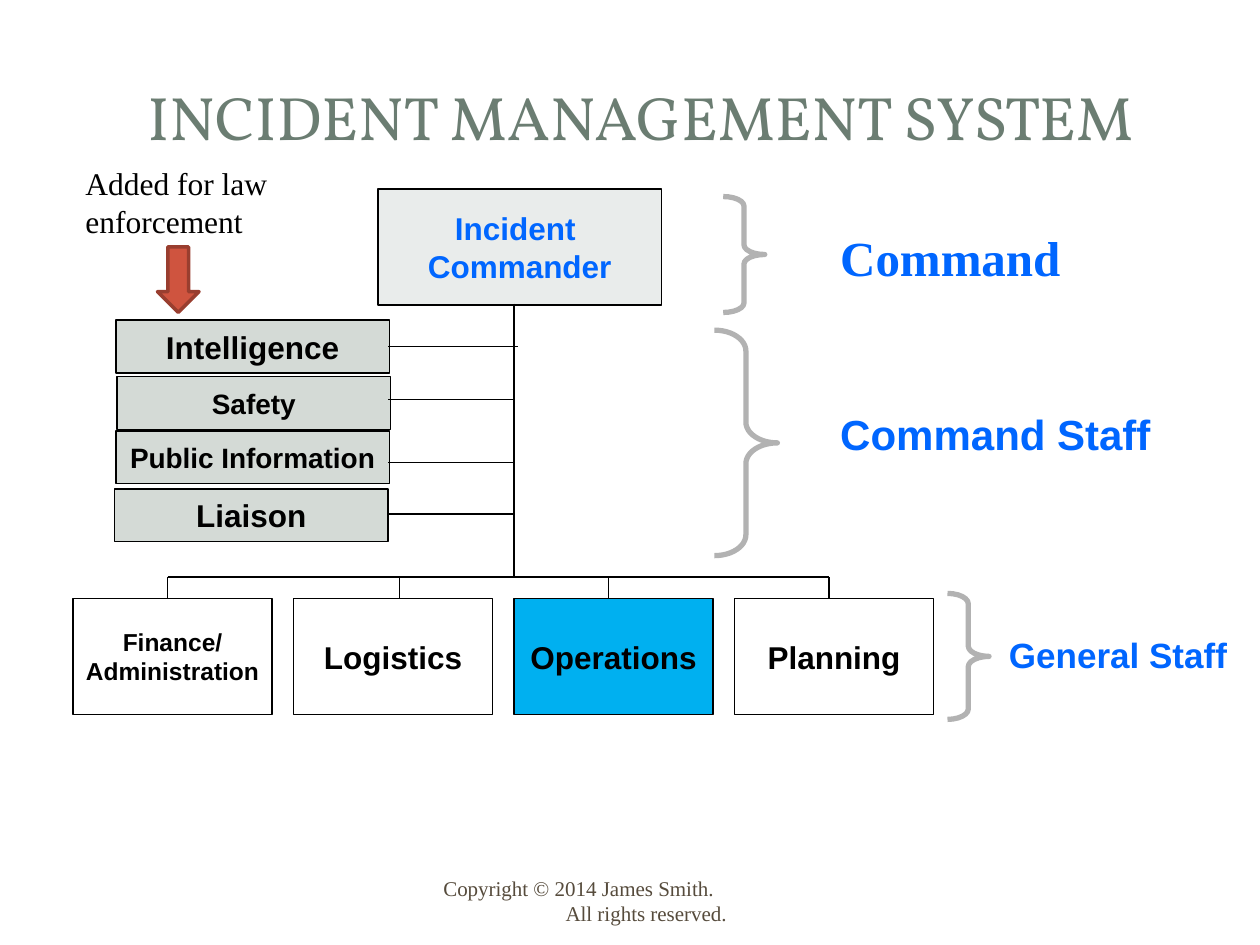
from dataclasses import dataclass

import pptx
import pptx.dml.color
import pptx.enum.shapes
import pptx.enum.text
import pptx.oxml.ns
import pptx.util
from lxml import etree

Inches = pptx.util.Inches
Pt = pptx.util.Pt
Shape = pptx.enum.shapes.MSO_SHAPE
Align = pptx.enum.text.PP_ALIGN
Anchor = pptx.enum.text.MSO_ANCHOR

BLACK, WHITE, BLUE = "000000", "FFFFFF", "0066FF"
STAFF_FILL = "D4DAD6"
SERIF, SANS = "Times New Roman", "Arial"


@dataclass
class Box:
    text: str
    left: float
    top: float
    width: float
    height: float
    fill: str
    size: int = 18
    color: str = BLACK


@dataclass
class Brace:
    left: float
    top: float
    width: float
    height: float
    curve: float


@dataclass
class Label:
    text: str
    left: float
    top: float
    width: float
    height: float
    size: int
    font: str = SANS
    color: str = BLUE
    bold: bool = True
    wrap: bool = False


STAFF_SIZE = (2.17, 0.42)
SECTION_TOP, SECTION_SIZE, SECTION_PITCH = 4.75, (1.58, 0.92), 1.75
SECTIONS = [
    ("Finance/\nAdministration", WHITE, 14),
    ("Logistics", WHITE, 18),
    ("Operations", "00B0F0", 18),
    ("Planning", WHITE, 18),
]
BOXES = [
    Box("Incident \nCommander", 3, 1.5, 2.25, 0.92, "E9ECEB", color=BLUE),
    Box("Intelligence", 0.92, 2.54, *STAFF_SIZE, STAFF_FILL),
    Box("Safety", 0.93, 2.99, *STAFF_SIZE, STAFF_FILL, 16),
    Box("Public Information", 0.92, 3.42, *STAFF_SIZE, STAFF_FILL, 16),
    Box("Liaison", 0.91, 3.88, *STAFF_SIZE, STAFF_FILL),
] + [
    Box(text, 0.58 + i * SECTION_PITCH, SECTION_TOP, *SECTION_SIZE, fill, size)
    for i, (text, fill, size) in enumerate(SECTIONS)
]
BRACES = [
    Brace(5.74, 1.56, 0.33, 0.92, 0.23),
    Brace(5.67, 2.62, 0.5, 1.79, 0.33),
    Brace(7.52, 4.71, 0.33, 1, 0.25),
]
LABELS = [
    Label("Command", 6.57, 1.76, 1.97, 0.57, 28, SERIF),
    Label("Command Staff", 6.57, 3.19, 2.69, 0.51, 24),
    Label("General Staff", 7.91, 4.98, 1.94, 0.44, 20),
    Label("Added for law enforcement", 0.58, 1.25, 2.08, 0.71, 18, SERIF, BLACK, False, True),
]
TRUNK_X, BUS_Y, STAFF_RIGHT = 4.08, 4.58, 3.08
DROPS = [1.33, 3.17, 4.83, 6.58]
LINES = [
    (TRUNK_X, 2.41, TRUNK_X, BUS_Y),
    (DROPS[0], BUS_Y, DROPS[-1], BUS_Y),
    (STAFF_RIGHT, 2.75, 4.11, 2.75),
]
LINES += [(x, BUS_Y, x, SECTION_TOP) for x in DROPS]
LINES += [(STAFF_RIGHT, y, TRUNK_X, y) for y in (3.17, 3.67, 4.08)]


def rgb(value: str) -> pptx.dml.color.RGBColor:
    return pptx.dml.color.RGBColor.from_string(value)


def write(tf, text: str, size: int, font: str, color: str, bold: bool, align) -> None:
    """Fill a text frame, one paragraph for each line of text."""
    tf.text = text
    for p in tf.paragraphs:
        p.alignment = align
        p.font.size = Pt(size)
        p.font.name = font
        p.font.bold = bold
        p.font.color.rgb = rgb(color)


def add_shape(slide, kind, area: tuple, line: str, weight: float, fill: str = ""):
    sp = slide.shapes.add_shape(kind, *map(Inches, area))
    sp.shadow.inherit = False
    if fill:
        sp.fill.solid()
        sp.fill.fore_color.rgb = rgb(fill)
    else:
        sp.fill.background()
    sp.line.color.rgb = rgb(line)
    sp.line.width = Pt(weight)
    return sp


def add_box(slide, box: Box) -> None:
    area = (box.left, box.top, box.width, box.height)
    sp = add_shape(slide, Shape.RECTANGLE, area, BLACK, 0.75, box.fill)
    tf = sp.text_frame
    tf.word_wrap = False
    tf.vertical_anchor = Anchor.MIDDLE
    write(tf, box.text, box.size, SANS, box.color, True, Align.CENTER)


def add_brace(slide, brace: Brace) -> None:
    area = (brace.left, brace.top, brace.width, brace.height)
    sp = add_shape(slide, Shape.RIGHT_BRACE, area, "B2B2B2", 3)
    sp.adjustments[0] = brace.curve
    sp.adjustments[1] = 0.5


def add_label(slide, label: Label):
    area = (label.left, label.top, label.width, label.height)
    tf = slide.shapes.add_textbox(*map(Inches, area)).text_frame
    tf.word_wrap = label.wrap
    write(tf, label.text, label.size, label.font, label.color, label.bold, Align.LEFT)
    return tf


def add_line(slide, ends: tuple) -> None:
    kind = pptx.enum.shapes.MSO_CONNECTOR.STRAIGHT
    line = slide.shapes.add_connector(kind, *map(Inches, ends))
    line.line.color.rgb = rgb(BLACK)
    line.line.width = Pt(0.75)
    etree.SubElement(line._element.spPr, pptx.oxml.ns.qn("a:effectLst"))


def add_title(slide) -> None:
    title = slide.shapes.title
    title.left, title.top, title.width, title.height = map(Inches, (0.17, 0.17, 9.83, 1.5))
    tf = title.text_frame
    tf.word_wrap = True
    tf.vertical_anchor = Anchor.MIDDLE
    write(tf, "INCIDENT MANAGEMENT SYSTEM", 35, "Vollkorn", "6B7D72", False, Align.CENTER)


def add_copyright(slide) -> None:
    """Add the notice, its second line set in by a hanging indent."""
    text = "Copyright © 2014 James Smith.\vAll rights reserved."
    tf = add_label(slide, Label(text, 3.42, 6.95, 3.17, 0.4, 12, SERIF, "564B3C", False, True))
    tf.vertical_anchor = Anchor.MIDDLE
    indent = Inches(0.97)
    props = tf.paragraphs[0]._p.get_or_add_pPr()
    props.set("marL", str(indent))
    props.set("indent", str(-indent))


def main() -> None:
    prs = pptx.Presentation()
    prs.slide_width, prs.slide_height = Inches(10), Inches(7.5)
    slide = prs.slides.add_slide(prs.slide_layouts[5])
    add_title(slide)
    for box in BOXES:
        add_box(slide, box)
    for brace in BRACES:
        add_brace(slide, brace)
    for ends in LINES:
        add_line(slide, ends)
    add_shape(slide, Shape.DOWN_ARROW, (1.25, 1.96, 0.33, 0.52), "993E2F", 2, "CF543F")
    for label in LABELS:
        add_label(slide, label)
    add_copyright(slide)
    prs.save("out.pptx")


if __name__ == "__main__":
    main()
